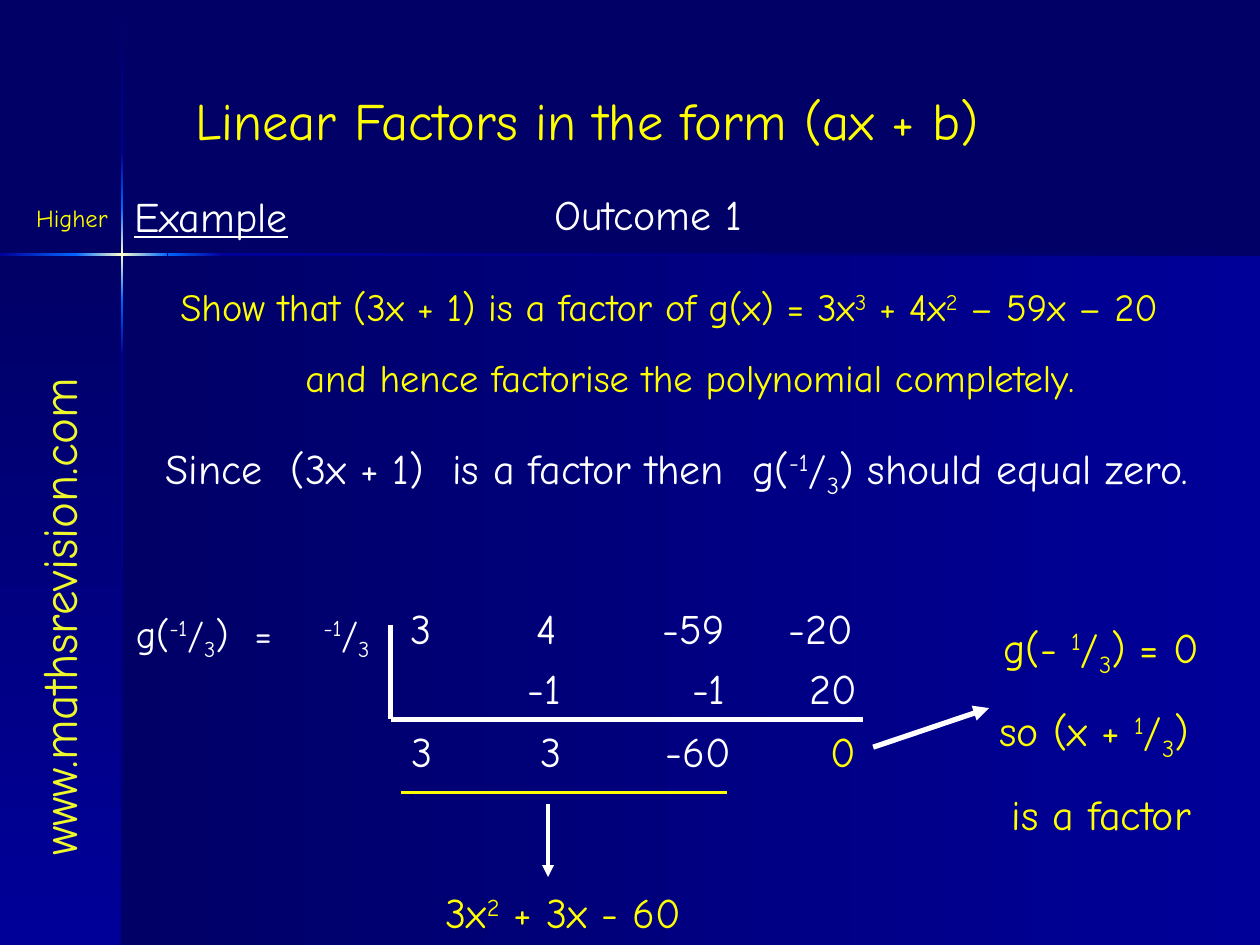
from copy import deepcopy

from lxml import etree
from pptx import Presentation, util as u
from pptx.dml.color import RGBColor as Rgb
from pptx.enum import shapes, text
from pptx.oxml.ns import qn

Inches = u.Inches


class Theme:
    font = "Comic Neue"
    white, yellow, lime = "FFFFFF", "FFFF00", "EEF82A"
    dark, mid, blue, cream = "000066", "000099", "0066FF", "FFFFCC"
    title, side, body, small, tiny = 30, 28, 24, 22, 14


deck = Presentation()
deck.slide_width, deck.slide_height = Inches(10), Inches(7.5)
slide = deck.slides.add_slide(deck.slide_layouts[6])
slide.background.fill.solid()
slide.background.fill.fore_color.rgb = Rgb.from_string(Theme.dark)


def write(box, lines, size=Theme.body, color=Theme.white, gap=0,
          align=text.PP_ALIGN.CENTER, tabs=()):
    """Add a text box; '|' parts runs, '^' raises one and '_' lowers one."""
    shape = slide.shapes.add_textbox(*map(Inches, box))
    frame = shape.text_frame
    frame.word_wrap = True
    for i, line in enumerate(lines):
        para = frame.paragraphs[0] if i == 0 else frame.add_paragraph()
        para.alignment = align
        if i:
            para.space_before = u.Pt(gap)
        if tabs:
            stops = etree.SubElement(para._p.get_or_add_pPr(), qn("a:tabLst"))
            for pos in tabs:
                etree.SubElement(stops, qn("a:tab"), pos=str(Inches(pos)), algn="l")
        para.font.name, para.font.size = Theme.font, u.Pt(size)
        para.font.color.rgb = Rgb.from_string(color)
        for part in line.split("|"):
            run = para.add_run()
            run.text = part.lstrip("^_")
            shift = {"^": "30000", "_": "-25000"}.get(part[0])
            if shift:
                run._r.get_or_add_rPr().set("baseline", shift)
    return shape


def draw(start, end, color=Theme.white, width=3, arrow=False):
    """Add a straight line, with an arrowhead at its end if asked."""
    line = slide.shapes.add_connector(
        shapes.MSO_CONNECTOR.STRAIGHT, *map(Inches, start + end))
    line.line.color.rgb = Rgb.from_string(color)
    line.line.width = u.Pt(width)
    if arrow:
        etree.SubElement(line.line._get_or_add_ln(), qn("a:tailEnd"), type="triangle")
    etree.SubElement(line._element.spPr, qn("a:effectLst"))


# Background panels and the glowing cross: box, angle, colours
bands = [
    ((0.97, 2.02, 9.03, 5.48), 0, (Theme.dark, Theme.mid)),
    ((0, 2.02, 0.97, 5.48), 90, (Theme.dark, Theme.mid)),
]
glow = [
    (Theme.dark, Theme.mid),
    (Theme.mid, Theme.blue),
    (Theme.blue, Theme.cream, Theme.blue),
    (Theme.blue, Theme.mid),
    (Theme.mid, Theme.dark),
]
rows = [0.01, 1.21, 1.65, 2.38, 2.82, 7.5]
for top, end, tones in zip(rows, rows[1:], glow):
    bands.append(((0.96, top, 0.02, end - top), 90, tones))
cols = [0, 0.6, 1.33, 1.77, 10]
for left, end, tones in zip(cols, cols[1:], glow[1:]):
    bands.append(((left, 2.01, end - left, 0.02), 0, tones))

for box, angle, tones in bands:
    band = slide.shapes.add_shape(shapes.MSO_SHAPE.RECTANGLE, *map(Inches, box))
    band.shadow.inherit = False
    band.line.fill.background()
    band.fill.gradient()
    band.fill.gradient_angle = -angle % 360
    stops = band._element.spPr.find(".//" + qn("a:gsLst"))
    while len(stops) < len(tones):
        stops.append(deepcopy(stops[0]))
    for i, (stop, tone) in enumerate(zip(band.fill.gradient_stops, tones)):
        stop.position = i / (len(tones) - 1)
        stop.color.rgb = Rgb.from_string(tone)

# Side label and headings
site = write((-1.73, 4.41, 4.39, 0.57), ["www.mathsrevision.com"],
             Theme.side, Theme.lime, align=text.PP_ALIGN.LEFT)
site.rotation = 270
write((0.16, 1.56, 0.82, 0.34), ["Higher"], Theme.tiny, Theme.yellow)
write((4.23, 1.45, 1.83, 0.5), ["Outcome 1"])
head = write((0.55, 1.46, 2.25, 0.5), ["Example"])
head.text_frame.paragraphs[0].runs[0].font.underline = True
write((1.02, 0.65, 7.28, 0.6), ["Linear Factors in the form (ax + b)"],
      Theme.title, Theme.yellow)

# Question: the second line sits a little to the right of the first
task = write((0.5, 2.2, 9.62, 1.03),
             ["Show that (3x + 1) is a factor of g(x) = 3x|^3| + 4x|^2| – 59x – 20",
              "and hence factorise the polynomial completely."],
             Theme.small, Theme.yellow, gap=13.8)
task.text_frame.paragraphs[1]._p.get_or_add_pPr().set("marL", str(Inches(0.33)))
write((0.74, 3.46, 9.26, 0.56),
      ["Since  (3x + 1)  is a factor then  g(|^-1|/|_3|) should equal zero."])

# Synthetic division
write((0.98, 4.79, 2.46, 0.52), ["g(|^-1|/|_3|)\t=\t|^-1|/|_3"], Theme.small,
      align=text.PP_ALIGN.LEFT, tabs=(0.94, 1.49))
draw((3.1, 4.96), (3.1, 5.71))
draw((3.1, 5.71), (6.85, 5.71))
write((3.1, 4.73, 3.83, 0.5), ["3\t4\t-59\t-20"], tabs=range(1, 8))
carry, total = 5.21, 5.71
for left, top, width, value, color in [
    (3.1, total, 0.5, "3", Theme.white),
    (3.86, carry, 0.92, "-1", Theme.white),
    (4.08, total, 0.58, "3", Theme.white),
    (5.25, carry, 0.75, "-1", Theme.white),
    (5.08, total, 0.92, "-60", Theme.white),
    (6.15, carry, 0.92, "20", Theme.white),
    (6.4, total, 0.58, "0", Theme.yellow),
]:
    write((left, top, width, 0.5), [value], color=color)

# Conclusion
write((7.24, 4.88, 3, 1.83),
      ["g(- |^1|/|_3|) = 0", "so (x + |^1|/|_3|) ", "is a factor"],
      color=Theme.yellow, gap=15)
draw((6.93, 5.93), (7.85, 5.62), arrow=True)

# Quotient
draw((3.18, 6.29), (5.77, 6.29), Theme.yellow, 2.25)
draw((4.35, 6.38), (4.35, 6.96), width=2.25, arrow=True)
write((2.71, 6.99, 3.52, 0.5), ["3x|^2| + 3x - 60"], color=Theme.yellow)

deck.save("out.pptx")
